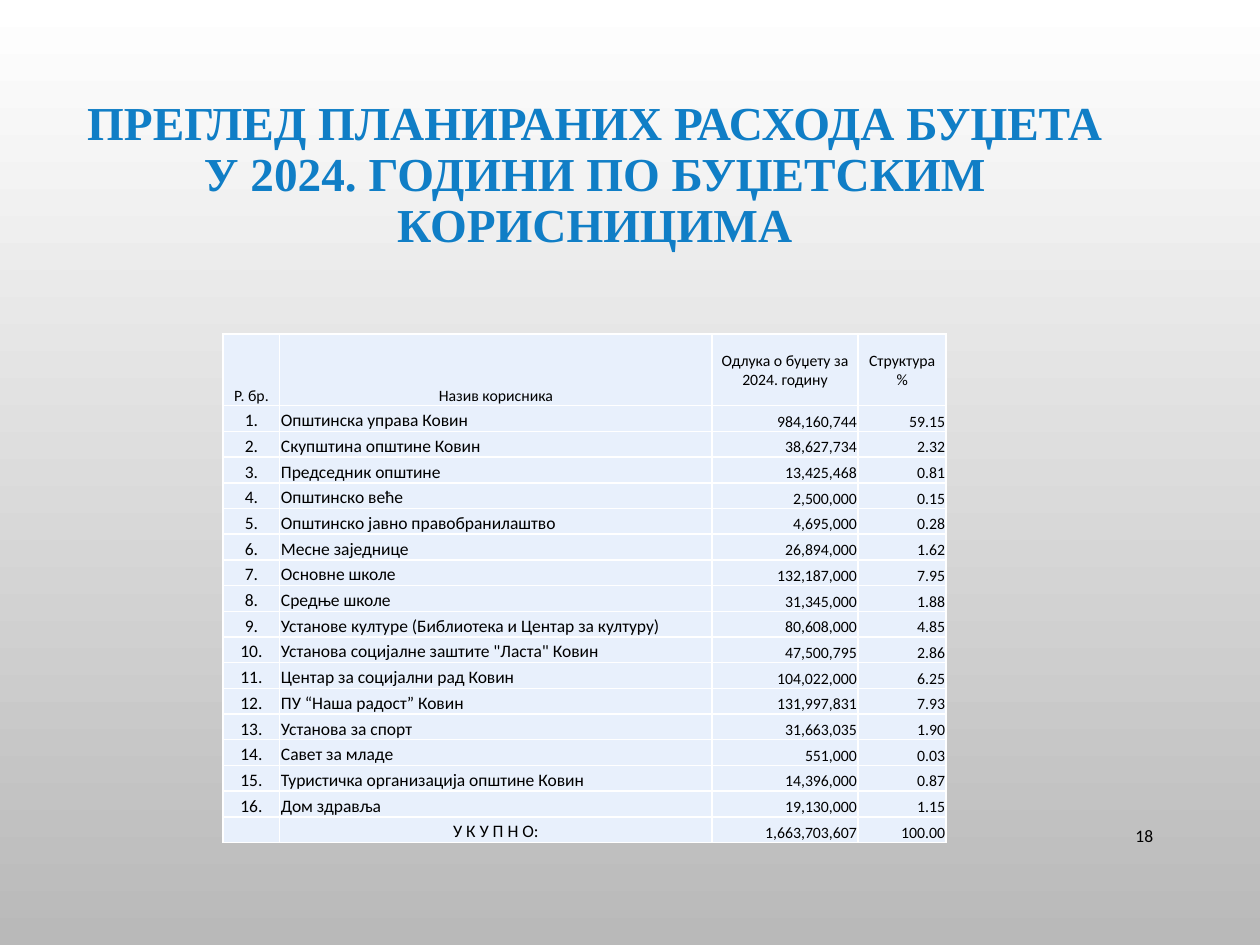
from lxml import etree
from pptx import Presentation
from pptx.dml.color import RGBColor
from pptx.enum import text
from pptx.oxml.ns import qn
from pptx.util import Inches, Pt

COLORS = {
    "top": "FFFFFF",
    "bottom": "B9B9B9",
    "title": "107EC6",
    "text": "000000",
    "cell": "E8F0FC",
    "border": "FFFFFF",
}
LEFT, CENTER, RIGHT = text.PP_ALIGN.LEFT, text.PP_ALIGN.CENTER, text.PP_ALIGN.RIGHT
MIDDLE, BOTTOM = text.MSO_ANCHOR.MIDDLE, text.MSO_ANCHOR.BOTTOM

HEADER = ["Р. бр.", "Назив корисника", "Одлука о буџету за 2024. годину", "Структура\n%"]
USERS = [
    ("Општинска управа Ковин", "984,160,744", "59.15"),
    ("Скупштина општине Ковин", "38,627,734", "2.32"),
    ("Председник општине", "13,425,468", "0.81"),
    ("Општинско веће", "2,500,000", "0.15"),
    ("Општинско јавно правобранилаштво", "4,695,000", "0.28"),
    ("Месне заједнице", "26,894,000", "1.62"),
    ("Основне школе", "132,187,000", "7.95"),
    ("Средње школе", "31,345,000", "1.88"),
    ("Установе културе (Библиотека и Центар за културу)", "80,608,000", "4.85"),
    ("Установа социјалне заштите \"Ласта\" Ковин", "47,500,795", "2.86"),
    ("Центар за социјални рад Ковин", "104,022,000", "6.25"),
    ("ПУ “Наша радост” Ковин", "131,997,831", "7.93"),
    ("Установа за спорт", "31,663,035", "1.90"),
    ("Савет за младе", "551,000", "0.03"),
    ("Туристичка организација општине Ковин", "14,396,000", "0.87"),
    ("Дом здравља", "19,130,000", "1.15"),
]
TOTAL = ["", "У К У П Н О:", "1,663,703,607", "100.00"]


def write(paragraph, words, size, align, font="Calibri", color="text", bold=False):
    paragraph.text = words
    paragraph.alignment = align
    for run in paragraph.runs:
        run.font.name = font
        run.font.size = Pt(size)
        run.font.bold = bold
        run.font.color.rgb = RGBColor.from_string(COLORS[color])
    if not words:
        # An empty cell keeps its row low only with a small end-of-paragraph size
        etree.SubElement(paragraph._p, qn("a:endParaRPr"), sz=str(size * 100))


def add_borders(cell):
    properties = cell._tc.get_or_add_tcPr()
    for position, side in enumerate(("a:lnL", "a:lnR", "a:lnT", "a:lnB")):
        line = etree.Element(qn(side), w=str(Pt(1)))
        fill = etree.SubElement(line, qn("a:solidFill"))
        etree.SubElement(fill, qn("a:srgbClr"), val=COLORS["border"])
        properties.insert(position, line)


presentation = Presentation()
presentation.slide_width = Inches(10)
presentation.slide_height = Inches(7.5)
slide = presentation.slides.add_slide(presentation.slide_layouts[5])

# Background
background = slide.background.fill
background.gradient()
background.gradient_angle = 270
for stop, name in zip(background.gradient_stops, ("top", "bottom")):
    stop.color.rgb = RGBColor.from_string(COLORS[name])

# Title
title = slide.shapes.title
title.left, title.top = Inches(0.43), Inches(0.68)
title.width, title.height = Inches(8.58), Inches(1.44)
title.text_frame.word_wrap = True
title.text_frame.auto_size = text.MSO_AUTO_SIZE.NONE
title.text_frame.vertical_anchor = MIDDLE
heading = title.text_frame.paragraphs[0]
write(heading,
      "ПРЕГЛЕД ПЛАНИРАНИХ РАСХОДА БУЏЕТА\nУ 2024. ГОДИНИ ПО БУЏЕТСКИМ КОРИСНИЦИМА",
      27, CENTER, "Times New Roman", "title", True)
heading.line_spacing = 0.9

# Slide number
number = slide.shapes.add_textbox(Inches(8.62), Inches(6.43), Inches(0.63), Inches(0.4))
number.text_frame.word_wrap = True
number.text_frame.vertical_anchor = MIDDLE
write(number.text_frame.paragraphs[0], "18", 10, RIGHT)

# Budget table
rows = [HEADER]
rows += [[f"{index}.", *user] for index, user in enumerate(USERS, 1)]
rows.append(TOTAL)

table = slide.shapes.add_table(
    len(rows), len(HEADER), Inches(1.77), Inches(2.65), Inches(5.74), Inches(4.04)).table
table.first_row = False
table.horz_banding = False
for column, width in zip(table.columns, (0.45, 3.43, 1.16, 0.7)):
    column.width = Inches(width)
table.rows[0].height = Inches(0.57)
for row in list(table.rows)[1:]:
    row.height = Inches((4.04 - 0.57) / (len(rows) - 1))

for row_index, values in enumerate(rows):
    is_header = row_index == 0
    is_total = row_index == len(rows) - 1
    for column_index, value in enumerate(values):
        is_amount = column_index >= 2
        if is_header or column_index == 0 or (is_total and not is_amount):
            align = CENTER
        else:
            align = RIGHT if is_amount else LEFT
        cell = table.cell(row_index, column_index)
        cell.margin_left = cell.margin_right = cell.margin_top = Inches(0.01)
        cell.margin_bottom = 0
        cell.vertical_anchor = MIDDLE if is_header and is_amount else BOTTOM
        cell.fill.solid()
        cell.fill.fore_color.rgb = RGBColor.from_string(COLORS["cell"])
        add_borders(cell)
        size = 9 if is_header or is_amount else 10
        write(cell.text_frame.paragraphs[0], value, size, align)

presentation.save("out.pptx")
